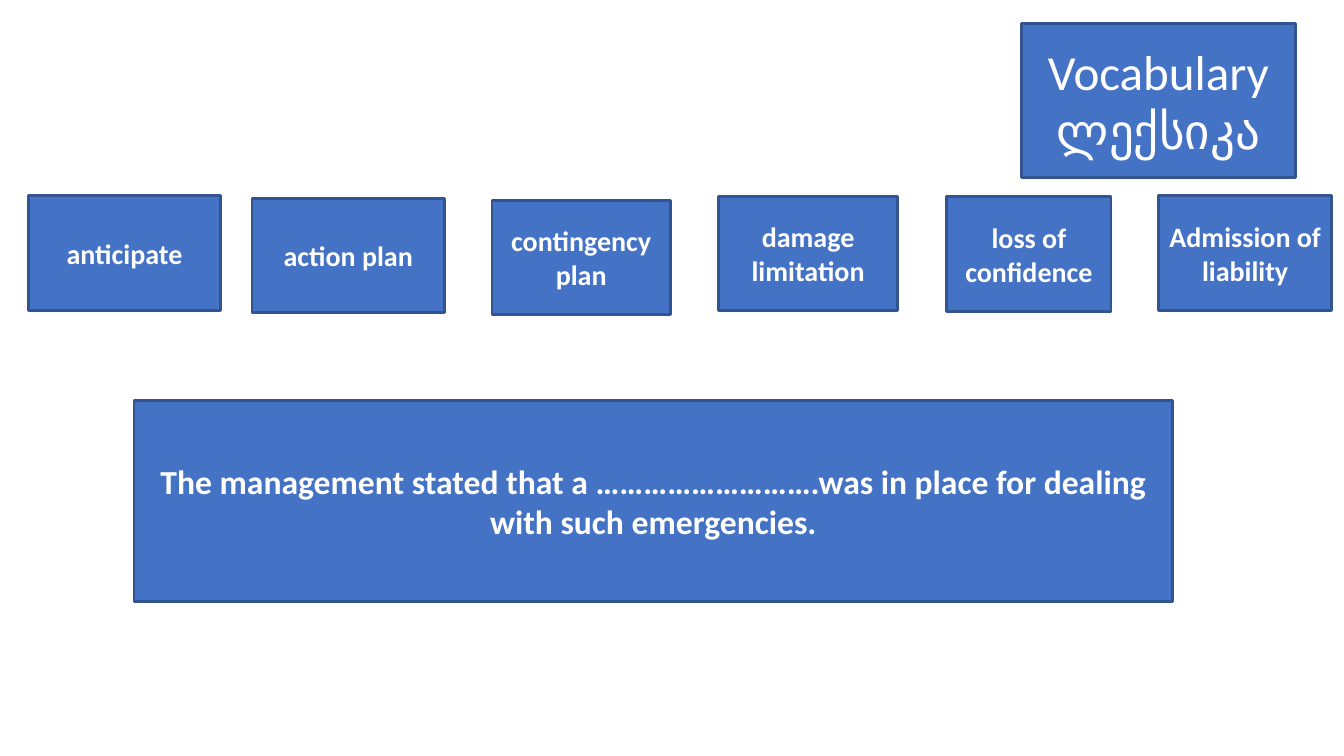
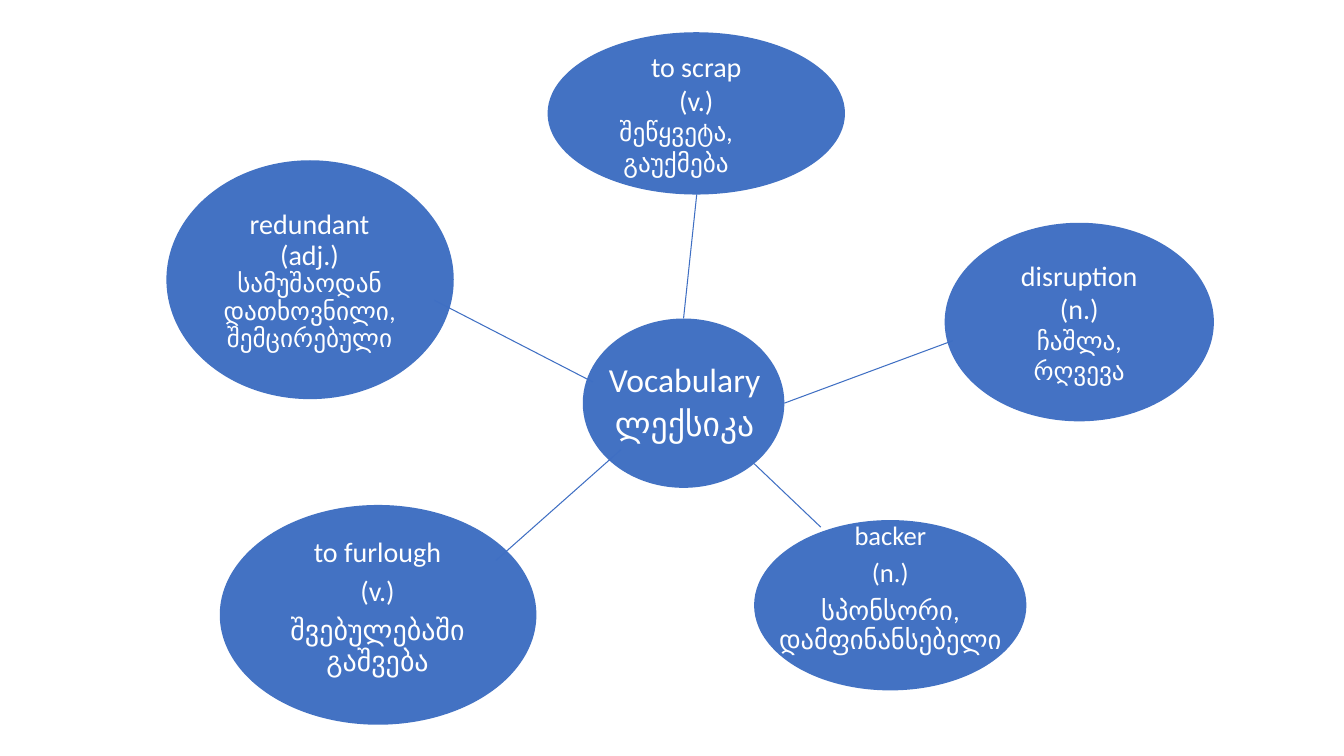
import pptx
import pptx.util
import pptx.dml.color
import pptx.enum.shapes
import pptx.enum.text
import lxml.etree

SLIDE_WIDTH = pptx.util.Inches(13.33)
SLIDE_HEIGHT = pptx.util.Inches(7.5)
FONT = "Calibri"
WHITE = "FFFFFF"
CARD_FILL, CARD_EDGE = "4472C4", "325491"
BUBBLE_FILL, SPOKE = "4372C3", "3F6FC3"
RECTANGLE = pptx.enum.shapes.MSO_SHAPE.RECTANGLE
OVAL = pptx.enum.shapes.MSO_SHAPE.OVAL
TITLE_LINES = [("Vocabulary", None), ("ლექსიკა", None)]

TERMS = [
    ("anticipate", (2.1, 25.87, 14.33, 15.2)),
    ("action plan", (18.75, 26.27, 14.33, 15.07)),
    ("contingency plan", (36.61, 26.53, 13.28, 15.07)),
    ("damage limitation", (53.49, 26, 13.28, 15.07)),
    ("loss of confidence", (70.44, 26, 12.23, 15.2)),
    ("Admission of liability", (86.2, 25.87, 12.9, 15.2)),
]
SPOKES = [
    (56.11, 61.33, 61.07, 69.73),
    (58.36, 53.33, 70.89, 45.07),
    (51.84, 25.73, 50.86, 42.13),
    (32.33, 39.73, 44.11, 50.53),
    (36.91, 74.13, 46.21, 59.47),
]


def across(share):
    """Turn a percentage of the slide's width into a length."""
    return round(SLIDE_WIDTH * share / 100)


def down(share):
    """Turn a percentage of the slide's height into a length."""
    return round(SLIDE_HEIGHT * share / 100)


def area(left, top, width, height):
    """Turn percentages into left, top, width and height."""
    return across(left), down(top), across(width), down(height)


def color(value):
    """Make a colour from a hex string."""
    return pptx.dml.color.RGBColor.from_string(value)


def paint(shape, fill, edge=None):
    """Fill a shape and outline it when an edge colour is given."""
    shape.fill.solid()
    shape.fill.fore_color.rgb = color(fill)
    if edge:
        shape.line.color.rgb = color(edge)
        shape.line.width = pptx.util.Pt(2)
    else:
        shape.line.fill.background()


def write(shape, lines, size, bold=False, inset=0.1, spacing=1, gap=0):
    """Write centred white lines, each a text and an optional own size."""
    frame = shape.text_frame
    frame.auto_size = pptx.enum.text.MSO_AUTO_SIZE.NONE
    frame.word_wrap = True
    frame.vertical_anchor = pptx.enum.text.MSO_ANCHOR.MIDDLE
    frame.margin_left = frame.margin_right = pptx.util.Inches(inset)
    frame.margin_top = frame.margin_bottom = pptx.util.Inches(min(inset, 0.05))
    for index, (words, own_size) in enumerate(lines):
        paragraph = frame.add_paragraph() if index else frame.paragraphs[0]
        paragraph.alignment = pptx.enum.text.PP_ALIGN.CENTER
        paragraph.line_spacing = spacing
        paragraph.space_before = pptx.util.Pt(gap if index else 0)
        run = paragraph.add_run()
        run.text = words
        run.font.name = FONT
        run.font.size = pptx.util.Pt(own_size or size)
        run.font.bold = bold
        run.font.color.rgb = color(WHITE)


def add_panel(slide, outline, place, fill, edge=None):
    """Add a flat preset shape."""
    panel = slide.shapes.add_shape(outline, *area(*place))
    panel.shadow.inherit = False
    paint(panel, fill, edge)
    return panel


def add_card(slide, words, place, size):
    """Add an outlined rectangle with bold text."""
    card = add_panel(slide, RECTANGLE, place, CARD_FILL, CARD_EDGE)
    write(card, [(words, None)], size, bold=True)


def add_label(slide, place, lines, size, gap=0):
    """Add a tightly spaced text over a bubble."""
    label = slide.shapes.add_textbox(*area(*place))
    write(label, lines, size, inset=0.01, spacing=0.9, gap=gap)


def add_spoke(slide, start_x, start_y, end_x, end_y):
    """Add a thin line between two bubbles."""
    spoke = slide.shapes.add_connector(
        pptx.enum.shapes.MSO_CONNECTOR.STRAIGHT,
        across(start_x), down(start_y), across(end_x), down(end_y))
    spoke.line.color.rgb = color(SPOKE)
    spoke.line.width = pptx.util.Pt(0.75)
    lxml.etree.SubElement(
        spoke.element.spPr, pptx.oxml.ns.qn("a:effectLst"))


def place_title(slide, place, size, **style):
    """Move the title to the front, place it and write the heading."""
    title = slide.shapes.title
    slide.shapes.element.append(title.element)
    title.left, title.top, title.width, title.height = area(*place)
    write(title, TITLE_LINES, size, **style)
    return title


def build_gap_fill(slide):
    """Build the word bank and the sentence to complete."""
    add_card(slide, "The management stated that a ……………………….was in place "
             "for dealing with such emergencies.", (9.98, 52.93, 77.27, 26.67), 24)
    for term, place in TERMS:
        add_card(slide, term, place, 20)
    heading = place_title(slide, (75.99, 3.07, 20.41, 20.4), 35)
    paint(heading, CARD_FILL, CARD_EDGE)


def build_word_map(slide):
    """Build the bubbles of new words around the heading."""
    add_panel(slide, OVAL, (43.36, 42.13, 15, 22.4), BUBBLE_FILL)
    place_title(slide, (44.94, 45.47, 12, 15.87), 24,
                inset=0.01, spacing=0.9, gap=6)

    scrap = add_panel(slide, OVAL, (40.74, 4.27, 22.13, 21.47), BUBBLE_FILL)
    write(scrap, [("to scrap", None), ("(v.)", None),
                  ("შეწყვეტა,", 18), ("გაუქმება", 18)], 20)
    first_meaning = scrap.text_frame.paragraphs[2]
    first_meaning._p.get_or_add_pPr().set("marR", str(pptx.util.Inches(0.4)))

    add_panel(slide, OVAL, (16.35, 66.8, 23.56, 29.07), BUBBLE_FILL)
    add_label(slide, (19.5, 72.8, 17.18, 15.2),
              [("to furlough", None), ("(v.)", None),
               ("შვებულებაში გაშვება", None)], 20, gap=6.3)

    add_panel(slide, OVAL, (12.38, 21.2, 21.38, 31.6), BUBBLE_FILL)
    add_label(slide, (12.68, 30.93, 20.71, 12.67),
              [("redundant", None), ("(adj.)", None),
               ("სამუშაოდან დათხოვნილი, შემცირებული", 18)], 20)

    add_panel(slide, OVAL, (56.11, 68.8, 20.26, 22.53), BUBBLE_FILL)
    add_label(slide, (53.94, 73.47, 24.61, 8.8),
              [("backer", None), ("(n.)", None),
               ("სპონსორი, დამფინანსებელი", None)], 19, gap=6.3)

    disruption = add_panel(slide, OVAL, (70.29, 29.47, 20.03, 26.27), CARD_FILL)
    write(disruption, [("disruption", None), ("(n.)", None),
                       ("ჩაშლა, რღვევა", 18)], 20)

    for ends in SPOKES:
        add_spoke(slide, *ends)


def main():
    """Build and save the presentation."""
    deck = pptx.Presentation()
    deck.slide_width, deck.slide_height = SLIDE_WIDTH, SLIDE_HEIGHT
    title_only = deck.slide_layouts[5]
    for build in (build_gap_fill, build_word_map):
        build(deck.slides.add_slide(title_only))
    deck.save("out.pptx")


if __name__ == "__main__":
    main()
